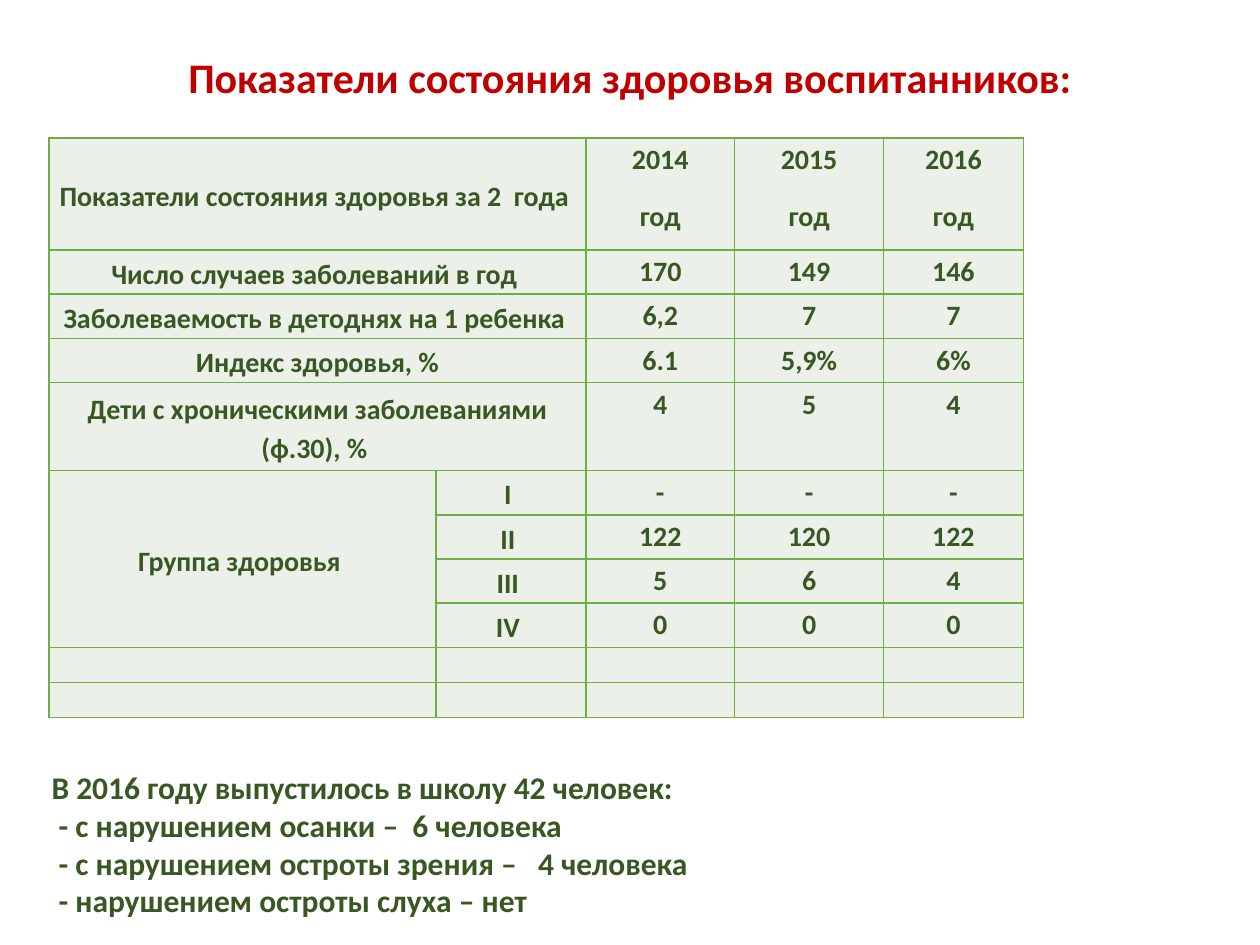
from dataclasses import dataclass

import pptx
import pptx.dml.color
import pptx.enum.text
import pptx.oxml
import pptx.oxml.ns
import pptx.util
from pptx.dml.color import RGBColor
from pptx.enum.text import MSO_ANCHOR, PP_ALIGN
from pptx.util import Cm, Pt

RED = RGBColor(0xC0, 0x00, 0x00)
DARK_GREEN = RGBColor(0x38, 0x57, 0x23)
PALE_GREEN = RGBColor(0xEB, 0xF1, 0xE9)
BORDER_GREEN = RGBColor(0x70, 0xAD, 0x47)
FONT = "Calibri"


@dataclass
class Row:
    label: str
    values: tuple[str, ...]
    height: float = 0.89
    group: str = ""
    wide: bool = True


COLUMNS = (7.8, 3.02, 3.0, 3.0, 2.82)
EMPTY = ("", "", "")
ROWS = (
    Row("Показатели состояния здоровья за 2  года ",
        ("2014\nгод", "2015\nгод", "2016\nгод"), 2.26),
    Row("Число случаев заболеваний в год ", ("170", "149", "146")),
    Row("Заболеваемость в детоднях на 1 ребенка ", ("6,2", "7", "7")),
    Row("Индекс здоровья, %", ("6.1", "5,9%", "6%")),
    Row("Дети с хроническими заболеваниями (ф.30), % ", ("4", "5", "4"), 1.78),
    Row("Группа здоровья ", ("-", "-", "-"), group="I ", wide=False),
    Row("", ("122", "120", "122"), group="II ", wide=False),
    Row("", ("5", "6", "4"), group="III ", wide=False),
    Row("", ("0", "0", "0"), group="IV ", wide=False),
    Row("", EMPTY, 0.71, wide=False),
    Row("", EMPTY, 0.71, wide=False),
)
GROUP_FIRST, GROUP_LAST = 5, 8
SUMMARY = (
    "В 2016 году выпустилось в школу 42 человек:",
    " - с нарушением осанки –  6 человека",
    " - с нарушением остроты зрения –   4 человека",
    " - нарушением остроты слуха – нет",
)


def set_font(p, size: int, color: RGBColor) -> None:
    p.font.name = FONT
    p.font.size = Pt(size)
    p.font.bold = True
    p.font.color.rgb = color


def add_borders(cell) -> None:
    tc_pr = cell._tc.get_or_add_tcPr()
    for side in ("lnL", "lnR", "lnT", "lnB"):
        tc_pr.append(pptx.oxml.parse_xml(
            f'<a:{side} {pptx.oxml.ns.nsdecls("a")} w="12700"><a:solidFill>'
            f'<a:srgbClr val="{BORDER_GREEN}"/></a:solidFill></a:{side}>'))


def fill_cell(cell, text: str, is_label: bool) -> None:
    add_borders(cell)
    cell.fill.solid()
    cell.fill.fore_color.rgb = PALE_GREEN
    cell.margin_top = cell.margin_bottom = 0
    cell.margin_left = cell.margin_right = Cm(0.18 if is_label else 0)
    cell.vertical_anchor = MSO_ANCHOR.MIDDLE if is_label else MSO_ANCHOR.TOP
    tf = cell.text_frame
    tf.text = text
    for p in tf.paragraphs:
        if not text:
            p._p.append(pptx.oxml.parse_xml(
                f'<a:endParaRPr {pptx.oxml.ns.nsdecls("a")} sz="1600"/>'))
            continue
        p.alignment = PP_ALIGN.CENTER
        p.line_spacing = 1.15
        p.space_after = Pt(10)
        set_font(p, 16, DARK_GREEN)


def add_title(s) -> None:
    sp = s.shapes.title
    sp.left, sp.top, sp.width, sp.height = Cm(1.5), Cm(0.91), Cm(22.4), Cm(1.27)
    sp.text_frame.text = "Показатели состояния здоровья воспитанников:"
    p = sp.text_frame.paragraphs[0]
    p.alignment = PP_ALIGN.CENTER
    set_font(p, 24, RED)


def add_health_table(s) -> None:
    sp = s.shapes.add_table(len(ROWS), len(COLUMNS), Cm(0.99), Cm(2.78),
                            Cm(sum(COLUMNS)), Cm(sum(r.height for r in ROWS)))
    table = sp.table
    table.first_row = table.horz_banding = False
    for column, width in zip(table.columns, COLUMNS):
        column.width = Cm(width)
    for i, row in enumerate(ROWS):
        table.rows[i].height = Cm(row.height)
        for j, text in enumerate((row.label, row.group, *row.values)):
            fill_cell(table.cell(i, j), text, j < 2)
        if row.wide:
            table.cell(i, 0).merge(table.cell(i, 1))
    table.cell(GROUP_FIRST, 0).merge(table.cell(GROUP_LAST, 0))


def add_summary(s) -> None:
    sp = s.shapes.add_textbox(Cm(0.79), Cm(15.34), Cm(19.84), Cm(3.33))
    tf = sp.text_frame
    tf.word_wrap = True
    tf.vertical_anchor = MSO_ANCHOR.MIDDLE
    tf.text = "\n".join(SUMMARY)
    for p in tf.paragraphs:
        set_font(p, 18, DARK_GREEN)


def main() -> None:
    prs = pptx.Presentation()
    prs.slide_width, prs.slide_height = Cm(25.4), Cm(19.05)
    s = prs.slides.add_slide(prs.slide_layouts[5])
    add_title(s)
    add_health_table(s)
    add_summary(s)
    prs.save("out.pptx")


if __name__ == "__main__":
    main()
